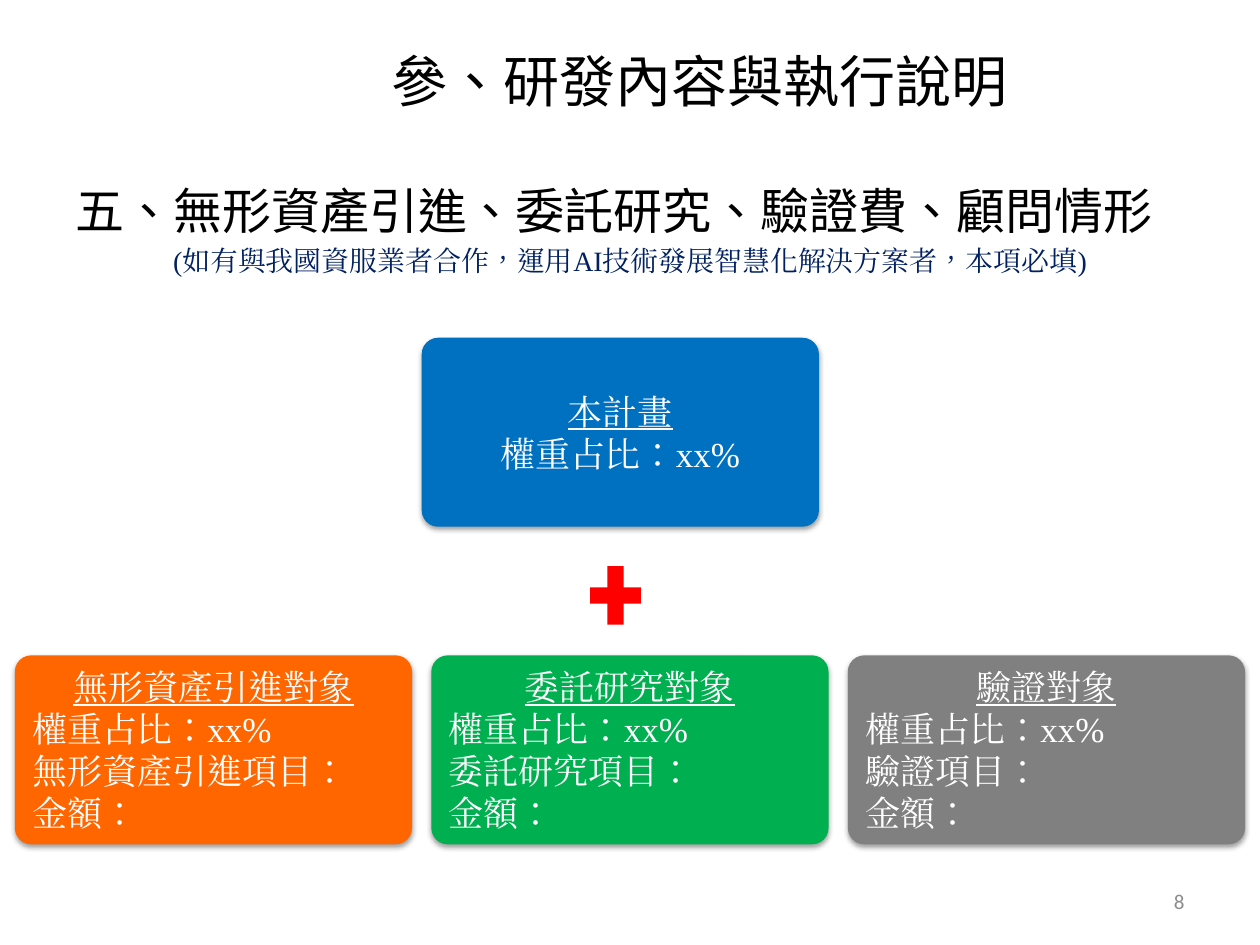
from dataclasses import dataclass

from lxml import etree
from pptx import Presentation
from pptx.dml.color import RGBColor
from pptx.enum.shapes import MSO_SHAPE
from pptx.enum.text import MSO_ANCHOR, PP_ALIGN
from pptx.oxml import parse_xml
from pptx.oxml.ns import nsdecls, qn
from pptx.util import Pt

ROUNDED, PLUS = MSO_SHAPE.ROUNDED_RECTANGLE, MSO_SHAPE.MATH_PLUS
LEFT, CENTER, RIGHT = PP_ALIGN.LEFT, PP_ALIGN.CENTER, PP_ALIGN.RIGHT
TOP, MIDDLE = MSO_ANCHOR.TOP, MSO_ANCHOR.MIDDLE


@dataclass(frozen=True)
class Theme:
    heading_font: str = "Noto Sans CJK SC"
    text_font: str = "Times New Roman"
    number_font: str = "Calibri"
    title_size: int = 32
    body_size: int = 28
    card_size: int = 20
    note_size: int = 16
    number_size: int = 12
    black: str = "000000"
    white: str = "FFFFFF"
    navy: str = "002060"
    number: str = "8C8C8C"
    blue: str = "0070C0"
    orange: str = "FF6600"
    green: str = "00B050"
    gray: str = "808080"
    red: str = "FF0000"


THEME = Theme()
CARD_W, CARD_H = 227, 108
CARD_LEFT, CARD_TOP, CARD_PITCH = 8.5, 374.5, 238
RATIO = "權重占比：xx%"
PARTNERS = [
    (THEME.orange, ["無形資產引進對象", RATIO, "無形資產引進項目：", "金額："]),
    (THEME.green, ["委託研究對象", RATIO, "委託研究項目：", "金額："]),
    (THEME.gray, ["驗證對象", RATIO, "驗證項目：", "金額："]),
]


def add_run(p, text, font, size, color, underline=False):
    r = p.add_run()
    r.text = text
    r.font.name, r.font.size = font, Pt(size)
    r.font.color.rgb = RGBColor.from_string(color)
    r.font.underline = underline
    rPr = r.font._element
    rPr.set("lang", "zh-TW")
    ea = etree.Element(qn("a:ea"), typeface=font)
    rPr.find(qn("a:latin")).addnext(ea)


def place(sp, left, top, width, height):
    sp.left, sp.top = Pt(left), Pt(top)
    sp.width, sp.height = Pt(width), Pt(height)


def fill_placeholder(sp, box, text, size, align, anchor):
    place(sp, *box)
    tf = sp.text_frame
    tf.word_wrap, tf.vertical_anchor = True, anchor
    p = tf.paragraphs[0]
    p.alignment, p.space_before = align, Pt(0)
    add_run(p, text, THEME.heading_font, size, THEME.black)
    return p


def remove_bullet(p):
    pPr = p._p.get_or_add_pPr()
    pPr.set("marL", "0")
    pPr.set("indent", "0")
    etree.SubElement(pPr, qn("a:buNone"))


def add_text(slide, box, text, font, size, color, align, anchor=TOP):
    sp = slide.shapes.add_textbox(*map(Pt, box))
    tf = sp.text_frame
    tf.word_wrap, tf.vertical_anchor = True, anchor
    p = tf.paragraphs[0]
    p.alignment = align
    add_run(p, text, font, size, color)
    return p


def add_block(slide, kind, box, color):
    sp = slide.shapes.add_shape(kind, *map(Pt, box))
    sp.shadow.inherit = False
    sp.fill.solid()
    sp.fill.fore_color.rgb = RGBColor.from_string(color)
    sp.line.fill.background()
    return sp


def add_soft_shadow(sp):
    effects = sp._element.spPr.find(qn("a:effectLst"))
    effects.append(parse_xml(
        f'<a:outerShdw {nsdecls("a")} blurRad="{Pt(3.1)}" dist="{Pt(1.6)}" '
        'dir="5400000" rotWithShape="0"><a:srgbClr val="000000">'
        '<a:alpha val="38000"/></a:srgbClr></a:outerShdw>'))


def add_card(slide, left, top, color, lines, align):
    """Rounded card with a centred, underlined heading above its lines."""
    sp = add_block(slide, ROUNDED, (left, top, CARD_W, CARD_H), color)
    sp.adjustments[0] = 0.087
    add_soft_shadow(sp)
    tf = sp.text_frame
    tf.word_wrap, tf.vertical_anchor = True, MIDDLE
    for i, line in enumerate(lines):
        p = tf.add_paragraph() if i else tf.paragraphs[0]
        p.alignment = align if i else CENTER
        add_run(p, line, THEME.text_font, THEME.card_size, THEME.white, i == 0)


def main():
    prs = Presentation()
    prs.slide_width, prs.slide_height = Pt(720), Pt(540)
    slide = prs.slides.add_slide(prs.slide_layouts[1])
    title, body = slide.placeholders

    fill_placeholder(title, (173, 9.5, 453.5, 72.5), "參、研發內容與執行說明",
                     THEME.title_size, CENTER, MIDDLE)
    p = fill_placeholder(body, (36, 83, 648, 187),
                         "五、無形資產引進、委託研究、驗證費、顧問情形",
                         THEME.body_size, LEFT, TOP)
    p.line_spacing = 1.5
    remove_bullet(p)
    p = add_text(slide, (28, 137, 664, 25),
                 "(如有與我國資服業者合作，運用AI技術發展智慧化解決方案者，本項必填)",
                 THEME.text_font, THEME.note_size, THEME.navy, CENTER)
    p.line_spacing = Pt(18)

    add_card(slide, 241, 193, THEME.blue, ["本計畫", RATIO], CENTER)
    add_block(slide, PLUS, (332, 317.5, 39.5, 45.5), THEME.red)
    for i, (color, lines) in enumerate(PARTNERS):
        add_card(slide, CARD_LEFT + i * CARD_PITCH, CARD_TOP, color, lines, LEFT)

    add_text(slide, (516, 500.5, 168, 29), "8", THEME.number_font,
             THEME.number_size, THEME.number, RIGHT, MIDDLE)
    prs.save("out.pptx")


if __name__ == "__main__":
    main()
